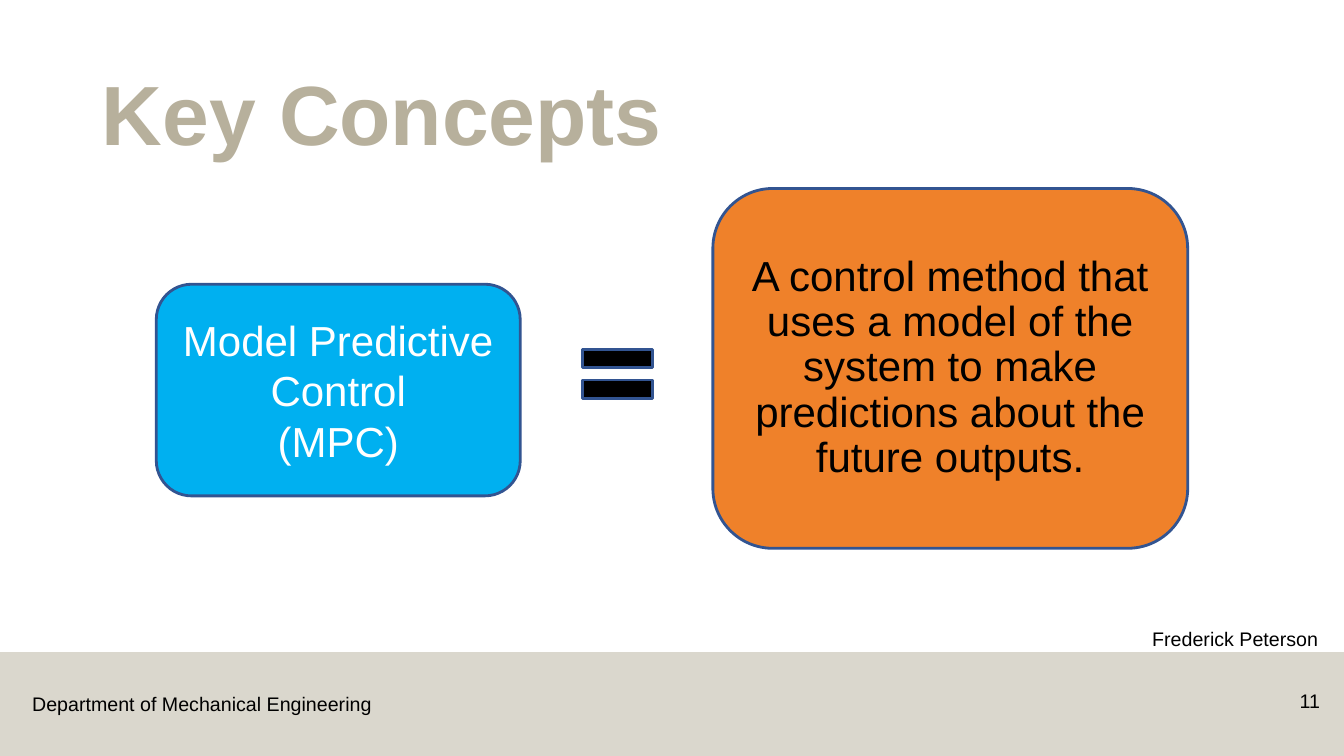
"""Build the Key Concepts slide defining Model Predictive Control."""
from lxml import etree
from pptx import Presentation
from pptx.dml.color import RGBColor
from pptx.enum.shapes import MSO_SHAPE as SHAPE
from pptx.enum.text import MSO_ANCHOR as ANCHOR, PP_ALIGN as ALIGN
from pptx.oxml.ns import qn
from pptx.util import Inches, Pt

TAUPE = RGBColor(0xB7, 0xB0, 0x9C)
BLUE = RGBColor(0x00, 0xB0, 0xF0)
ORANGE = RGBColor(0xEF, 0x81, 0x2A)
NAVY = RGBColor(0x32, 0x54, 0x91)
BLACK = RGBColor(0x00, 0x00, 0x00)
WHITE = RGBColor(0xFF, 0xFF, 0xFF)


def write(sp, text, size=14, color=BLACK, bold=False, align=ALIGN.LEFT,
          anchor=ANCHOR.TOP, spacing=1.0, inset=0.1):
    tf = sp.text_frame
    tf.word_wrap = True
    tf.vertical_anchor = anchor
    tf.margin_left = tf.margin_right = Inches(inset)
    for i, line in enumerate(text.split("\n")):
        p = tf.paragraphs[0] if i == 0 else tf.add_paragraph()
        p.alignment = align
        p.line_spacing = spacing
        r = p.add_run()
        r.text = line
        r.font.name = "Arial"
        r.font.size = Pt(size)
        r.font.bold = bold
        r.font.color.rgb = color


def add_block(kind, left, top, width, height, fill, line=NAVY):
    sp = s.shapes.add_shape(kind, Inches(left), Inches(top), Inches(width), Inches(height))
    sp.shadow.inherit = False
    sp.fill.solid()
    sp.fill.fore_color.rgb = fill
    if line is None:
        sp.line.fill.background()
    else:
        sp.line.color.rgb = line
        sp.line.width = Pt(2)
    return sp


prs = Presentation()
prs.slide_width, prs.slide_height = Inches(13.33), Inches(7.5)
s = prs.slides.add_slide(prs.slide_layouts[6])

footer = add_block(SHAPE.RECTANGLE, 0, 6.47, 13.33, 1.03, TAUPE, line=None)
footer_color = footer.fill._xPr.find(qn("a:solidFill"))[0]
etree.SubElement(footer_color, qn("a:alpha"), val="50000")

labels = [
    (0.22, 6.82, 3.59, 0.34, "Department of Mechanical Engineering", {}),
    (0.91, 0.75, 11.5, 0.92, "Key Concepts",
     dict(size=60, color=TAUPE, bold=True, anchor=ANCHOR.BOTTOM, spacing=0.9)),
    (12.42, 6.79, 0.77, 0.4, "11", dict(align=ALIGN.RIGHT)),
    (11.33, 6.17, 2, 0.34, "Frederick Peterson", {}),
]
for left, top, width, height, text, style in labels:
    box = s.shapes.add_textbox(Inches(left), Inches(top), Inches(width), Inches(height))
    write(box, text, **style)

centred = dict(size=30, align=ALIGN.CENTER, anchor=ANCHOR.MIDDLE, inset=0.05)
term = add_block(SHAPE.ROUNDED_RECTANGLE, 1.55, 2.82, 3.61, 2.1, BLUE)
write(term, "Model Predictive Control\n(MPC)", color=WHITE, **centred)

for top in (3.47, 3.77):
    add_block(SHAPE.RECTANGLE, 5.78, top, 0.69, 0.18, BLACK)

definition = add_block(SHAPE.ROUNDED_RECTANGLE, 7.07, 1.87, 4.71, 3.57, ORANGE)
write(definition, "A control method that uses a model of the system to make "
      "predictions about the future outputs.", spacing=0.9, **centred)

prs.save("out.pptx")
